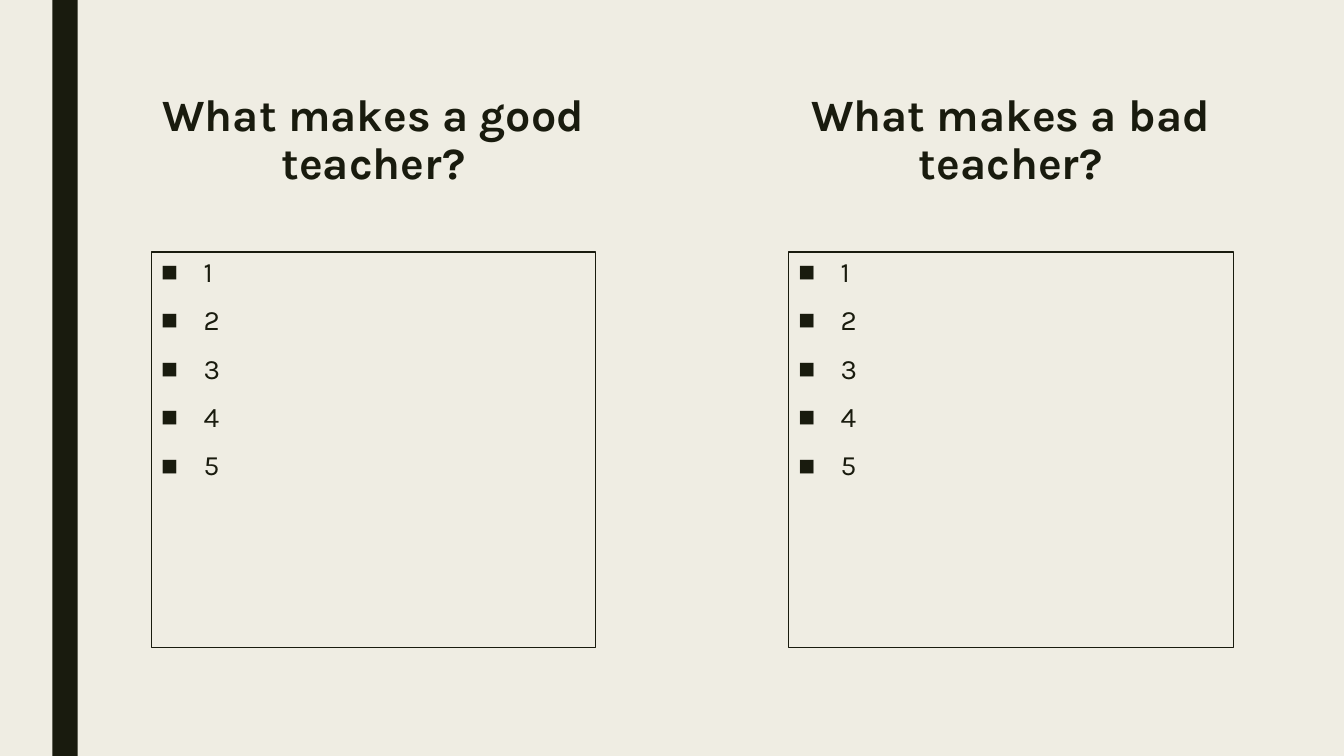
from lxml import etree
from pptx import Presentation
from pptx.dml.color import RGBColor
from pptx.enum.shapes import MSO_SHAPE as Shape
from pptx.enum.text import MSO_ANCHOR as Anchor, PP_ALIGN as Align
from pptx.oxml.ns import qn
from pptx.util import Inches, Pt

# Content
COLUMNS = [
    ("What makes a good teacher?", ["1", "2", "3", "4", "5"]),
    ("What makes a bad teacher?", ["1", "2", "3", "4", "5"]),
]
INK, PAPER = "191B0E", "EFEDE3"
FONT = "Karla"

# Layout in inches
LEFT, STEP, WIDTH = 1.5, 6.32, 4.41
TITLE_TOP, TITLE_HEIGHT = 0.88, 1.62
LIST_TOP, LIST_HEIGHT = TITLE_TOP + TITLE_HEIGHT, 3.92
INDENT = 0.42


def color(value):
    return RGBColor.from_string(value)


def add_bullet(para):
    props = para._p.get_or_add_pPr()
    props.set("marL", str(Inches(INDENT)))
    props.set("indent", str(-Inches(INDENT)))
    etree.SubElement(props, qn("a:buFont")).set("typeface", "Arial")
    etree.SubElement(props, qn("a:buChar")).set("char", "■")


def write(box, lines, size, bold=False, align=Align.LEFT, spacing=1.0,
          before=0, after=0, bullet=False):
    frame = box.text_frame
    frame.word_wrap = True
    frame.vertical_anchor = Anchor.TOP
    for index, line in enumerate(lines):
        para = frame.paragraphs[0] if index == 0 else frame.add_paragraph()
        para.alignment = align
        para.line_spacing = spacing
        para.space_before, para.space_after = Pt(before), Pt(after)
        if bullet:
            add_bullet(para)
        span = para.add_run()
        span.text = line
        span.font.name, span.font.size, span.font.bold = FONT, Pt(size), bold
        span.font.color.rgb = color(INK)


def add_box(page, left, top, width, height):
    box = page.shapes.add_shape(Shape.RECTANGLE, Inches(left), Inches(top),
                                Inches(width), Inches(height))
    box.shadow.inherit = False
    return box


deck = Presentation()
deck.slide_width, deck.slide_height = Inches(13.33), Inches(7.5)
page = deck.slides.add_slide(deck.slide_layouts[6])
page.background.fill.solid()
page.background.fill.fore_color.rgb = color(PAPER)

# Side bar
bar = add_box(page, 0.52, 0, 0.25, 7.5)
bar.fill.solid()
bar.fill.fore_color.rgb = color(INK)
bar.line.fill.background()

# Question above a framed list, one per column
for number, (question, answers) in enumerate(COLUMNS):
    left = LEFT + number * STEP
    title = page.shapes.add_textbox(Inches(left), Inches(TITLE_TOP),
                                    Inches(WIDTH), Inches(TITLE_HEIGHT))
    write(title, [question], 32, bold=True, align=Align.CENTER, spacing=0.89)

    frame_box = add_box(page, left, LIST_TOP, WIDTH, LIST_HEIGHT)
    frame_box.fill.background()
    frame_box.line.color.rgb = color(INK)
    frame_box.line.width = Pt(0.75)
    write(frame_box, answers, 20, spacing=0.94, before=10, after=2, bullet=True)

deck.save("out.pptx")
